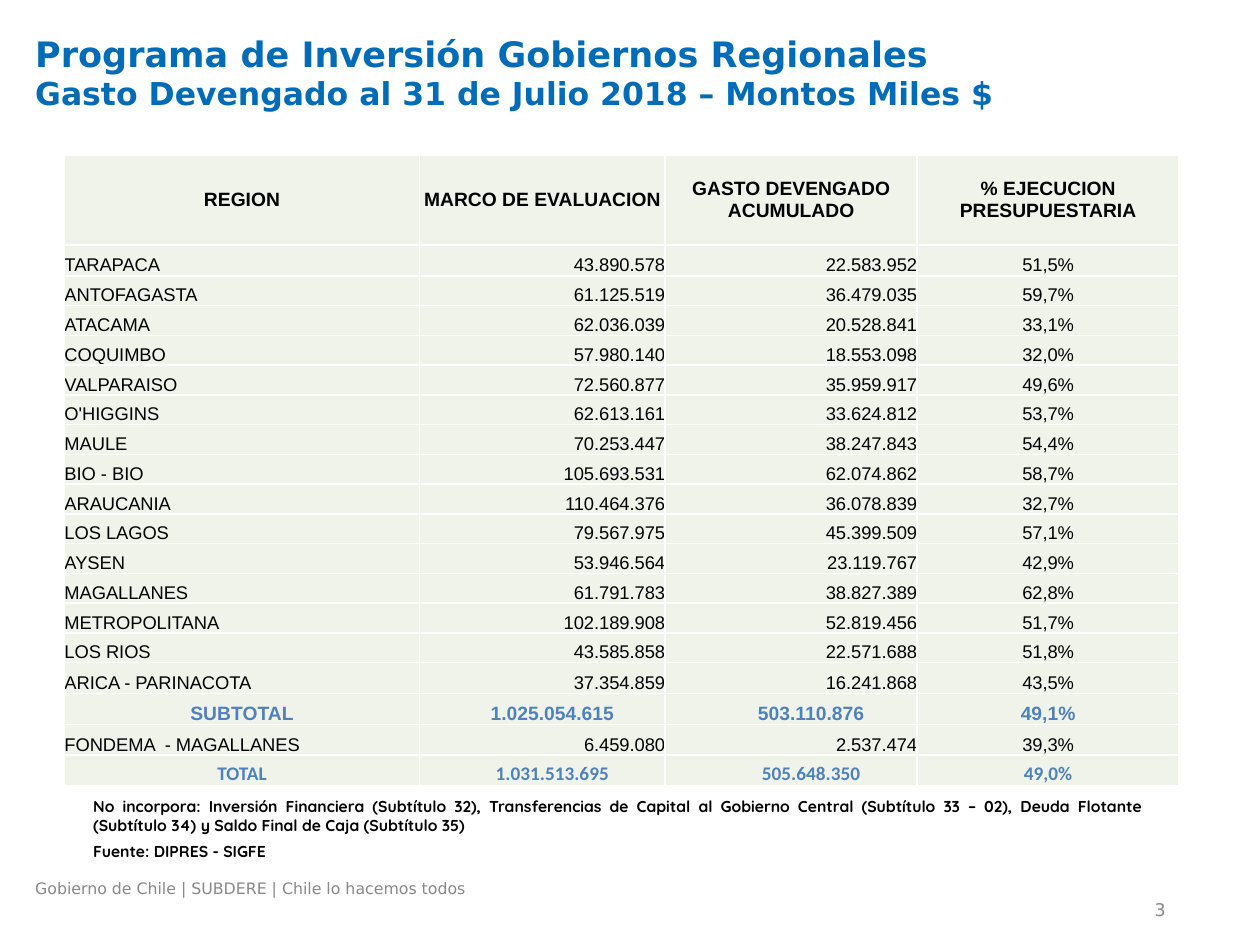
from dataclasses import dataclass

from lxml.etree import SubElement
from pptx import Presentation
from pptx.dml.color import RGBColor
from pptx.enum.text import MSO_ANCHOR, PP_ALIGN
from pptx.oxml.ns import qn
from pptx.util import Cm, Pt


@dataclass(frozen=True)
class TextStyle:
    size: float
    color: str
    font: str
    bold: bool = False


@dataclass(frozen=True)
class Theme:
    title: TextStyle = TextStyle(20, "006CB7", "DejaVu Sans", True)
    subtitle_size: float = 18
    footer: TextStyle = TextStyle(9, "898989", "DejaVu Sans")
    page_number: TextStyle = TextStyle(10, "898989", "DejaVu Sans")
    note: TextStyle = TextStyle(9, "000000", "Quicksand", True)
    note_gap: float = 4.5
    header: TextStyle = TextStyle(11, "000000", "Arial", True)
    region: TextStyle = TextStyle(10.5, "000000", "Arial")
    subtotal: TextStyle = TextStyle(11, "4F81BD", "Arial", True)
    total: TextStyle = TextStyle(11, "4F81BD", "Calibri", True)
    cell_fill: str = "EFF3EA"
    cell_border: str = "FFFFFF"
    border_width: float = 1


THEME = Theme()

HEADINGS = ("REGION", "MARCO DE EVALUACION", "GASTO DEVENGADO ACUMULADO",
            "% EJECUCION PRESUPUESTARIA")
REGIONS = [
    ("TARAPACA", "43.890.578", "22.583.952", "51,5%"),
    ("ANTOFAGASTA", "61.125.519", "36.479.035", "59,7%"),
    ("ATACAMA", "62.036.039", "20.528.841", "33,1%"),
    ("COQUIMBO", "57.980.140", "18.553.098", "32,0%"),
    ("VALPARAISO", "72.560.877", "35.959.917", "49,6%"),
    ("O'HIGGINS", "62.613.161", "33.624.812", "53,7%"),
    ("MAULE", "70.253.447", "38.247.843", "54,4%"),
    ("BIO - BIO", "105.693.531", "62.074.862", "58,7%"),
    ("ARAUCANIA", "110.464.376", "36.078.839", "32,7%"),
    ("LOS LAGOS", "79.567.975", "45.399.509", "57,1%"),
    ("AYSEN", "53.946.564", "23.119.767", "42,9%"),
    ("MAGALLANES", "61.791.783", "38.827.389", "62,8%"),
    ("METROPOLITANA", "102.189.908", "52.819.456", "51,7%"),
    ("LOS RIOS", "43.585.858", "22.571.688", "51,8%"),
    ("ARICA - PARINACOTA", "37.354.859", "16.241.868", "43,5%"),
]
SUBTOTAL = ("SUBTOTAL", "1.025.054.615", "503.110.876", "49,1%")
FONDEMA = ("FONDEMA  - MAGALLANES", "6.459.080", "2.537.474", "39,3%")
TOTAL = ("TOTAL", "1.031.513.695", "505.648.350", "49,0%")
NOTES = [
    "No incorpora: Inversión Financiera (Subtítulo 32), Transferencias de "
    "Capital al Gobierno Central (Subtítulo 33 – 02), Deuda Flotante "
    "(Subtítulo 34) y Saldo Final de Caja (Subtítulo 35)",
    "Fuente: DIPRES - SIGFE",
]

COLUMN_WIDTHS = (7.16, 4.95, 5.08, 5.28)
HEADER_HEIGHT, REGION_HEIGHT, EDGE_HEIGHT = 1.82, 0.6, 0.62
CENTERED = (PP_ALIGN.CENTER,) * 4
BY_COLUMN = (PP_ALIGN.LEFT, PP_ALIGN.RIGHT, PP_ALIGN.RIGHT, PP_ALIGN.CENTER)
NO_INDENT = (0, 0, 0, 0)
SUM_INDENT = (0, 0.4, 0.8, 0)


def style_paragraph(paragraph, style, alignment):
    paragraph.alignment = alignment
    font = paragraph.font
    font.size = Pt(style.size)
    font.name = style.font
    font.bold = style.bold
    font.color.rgb = RGBColor.from_string(style.color)


def add_text(slide, left, top, width, height, lines, style,
             alignments=(PP_ALIGN.LEFT,), anchor=MSO_ANCHOR.TOP, gap=0):
    """Add one paragraph per line, each with its own alignment."""
    frame = slide.shapes.add_textbox(
        Cm(left), Cm(top), Cm(width), Cm(height)).text_frame
    frame.word_wrap = True
    frame.vertical_anchor = anchor
    for index, (line, alignment) in enumerate(zip(lines, alignments)):
        paragraph = frame.add_paragraph() if index else frame.paragraphs[0]
        style_paragraph(paragraph, style, alignment)
        if index:
            paragraph.space_before = Pt(gap)
        paragraph.add_run().text = line
    return frame


def add_title(slide):
    frame = add_text(slide, 0.46, 0.53, 24.43, 2.39,
                     ["Programa de Inversión Gobiernos Regionales"], THEME.title)
    heading = frame.paragraphs[0]
    heading.add_line_break()
    subtitle = heading.add_run()
    subtitle.text = "Gasto Devengado al 31 de Julio 2018 – Montos Miles $"
    subtitle.font.size = Pt(THEME.subtitle_size)


def add_borders(cell):
    properties = cell._tc.get_or_add_tcPr()
    for side in ("a:lnL", "a:lnR", "a:lnT", "a:lnB"):
        line = SubElement(properties, qn(side), w=str(Pt(THEME.border_width)))
        fill = SubElement(line, qn("a:solidFill"))
        SubElement(fill, qn("a:srgbClr"), val=THEME.cell_border)


def fill_row(cells, values, style, alignments, indents=NO_INDENT,
             anchor=MSO_ANCHOR.BOTTOM):
    for cell, value, alignment, indent in zip(cells, values, alignments, indents):
        add_borders(cell)
        cell.fill.solid()
        cell.fill.fore_color.rgb = RGBColor.from_string(THEME.cell_fill)
        cell.margin_left = Cm(indent)
        cell.margin_right = cell.margin_top = cell.margin_bottom = 0
        cell.vertical_anchor = anchor
        paragraph = cell.text_frame.paragraphs[0]
        style_paragraph(paragraph, style, alignment)
        paragraph.add_run().text = value


def add_spending_table(slide):
    heights = ([HEADER_HEIGHT, EDGE_HEIGHT]
               + [REGION_HEIGHT] * (len(REGIONS) - 2) + [EDGE_HEIGHT] * 4)
    table = slide.shapes.add_table(
        len(heights), len(COLUMN_WIDTHS), Cm(1.3), Cm(3.12),
        Cm(sum(COLUMN_WIDTHS)), Cm(sum(heights))).table
    table.first_row = table.horz_banding = False
    for column, width in zip(table.columns, COLUMN_WIDTHS):
        column.width = Cm(width)
    for row, height in zip(table.rows, heights):
        row.height = Cm(height)

    header, *regions, subtotal, fondema, total = [row.cells for row in table.rows]
    fill_row(header, HEADINGS, THEME.header, CENTERED, anchor=MSO_ANCHOR.MIDDLE)
    for cells, values in zip([*regions, fondema], [*REGIONS, FONDEMA]):
        fill_row(cells, values, THEME.region, BY_COLUMN)
    fill_row(subtotal, SUBTOTAL, THEME.subtotal, CENTERED, SUM_INDENT)
    fill_row(total, TOTAL, THEME.total, CENTERED, SUM_INDENT)


def main():
    presentation = Presentation()
    presentation.slide_width, presentation.slide_height = Cm(25.4), Cm(19.05)
    slide = presentation.slides.add_slide(presentation.slide_layouts[6])
    add_text(slide, 17.83, 18.08, 5.92, 0.53, ["3"], THEME.page_number,
             [PP_ALIGN.RIGHT], MSO_ANCHOR.MIDDLE)
    add_title(slide)
    add_text(slide, 0.46, 17.58, 16.46, 0.69,
             ["Gobierno de Chile | SUBDERE | Chile lo hacemos todos"], THEME.footer)
    add_text(slide, 1.63, 15.93, 21.62, 1.6, NOTES, THEME.note,
             [PP_ALIGN.JUSTIFY, PP_ALIGN.LEFT], gap=THEME.note_gap)
    add_spending_table(slide)
    presentation.save("out.pptx")


if __name__ == "__main__":
    main()
